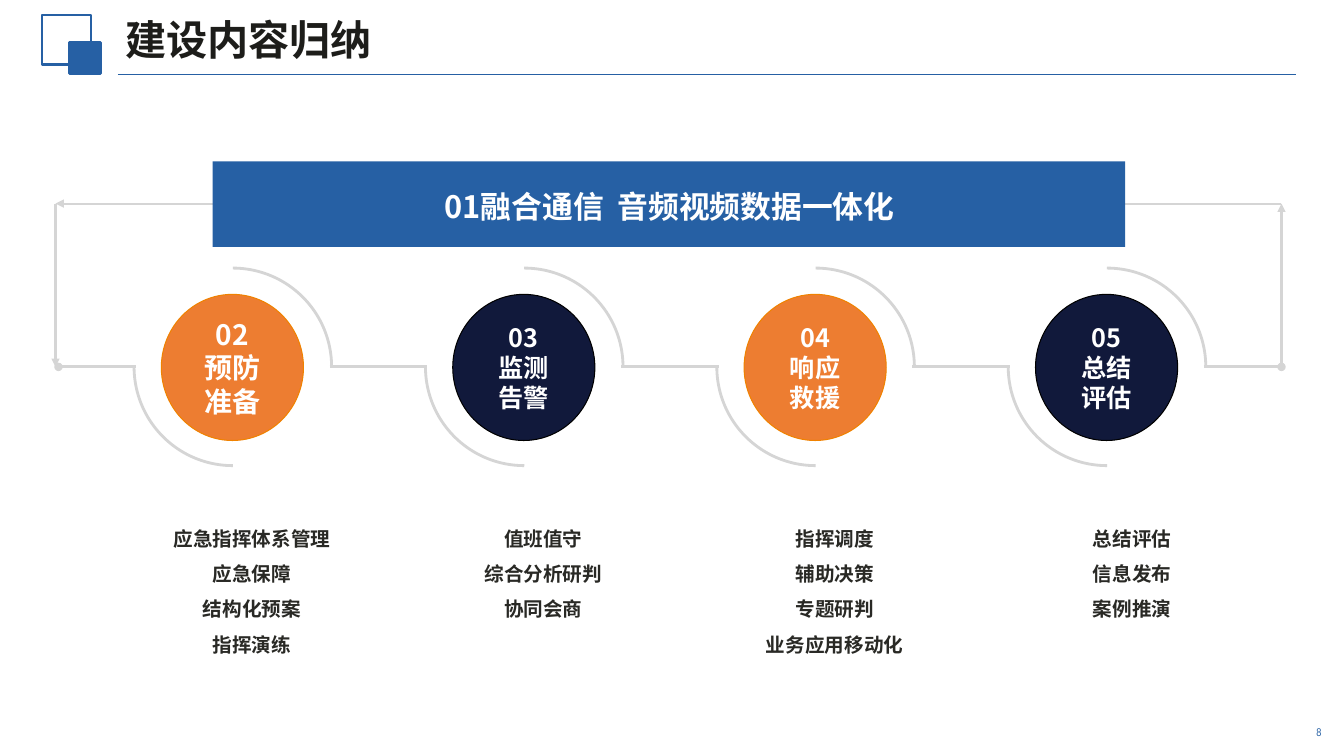
from pptx import Presentation
from pptx.dml.color import RGBColor
from pptx.enum import shapes, text
from pptx.oxml import xmlchemy
from pptx.util import Inches, Pt

BLUE = RGBColor(0x26, 0x60, 0xA4)
ORANGE = RGBColor(0xED, 0x7D, 0x31)
ORANGE_EDGE = RGBColor(0xF0, 0x82, 0x00)
NAVY = RGBColor(0x11, 0x19, 0x3B)
BLACK = RGBColor(0, 0, 0)
WHITE = RGBColor(0xFF, 0xFF, 0xFF)
GREY = RGBColor(0xD5, 0xD5, 0xD5)
TITLE_INK = RGBColor(0x1D, 0x1D, 0x1A)
BODY_INK = RGBColor(0x29, 0x29, 0x25)
FONT = "Noto Sans CJK SC"

FIRST_CENTER, PITCH, AXIS = 2.31, 2.89, 3.64
RADIUS = 0.98
LOOP_LEFT, LOOP_RIGHT, LOOP_TOP = 0.55, 12.71, 2.02

# label lines, number size, fill, outline, items, list offset, list width, list height
STAGES = [
    (["02", "预防", "准备"], 20, ORANGE, ORANGE_EDGE,
     ["应急指挥体系管理", "应急保障", "结构化预案", "指挥演练"], 0.19, 1.96, 2.42),
    (["03", "监测", "告警"], 18, NAVY, BLACK,
     ["值班值守", "综合分析研判", "协同会商"], 0.19, 1.96, 2.42),
    (["04", "响应", "救援"], 18, ORANGE, ORANGE_EDGE,
     ["指挥调度", "辅助决策", "专题研判", "业务应用移动化"], 0.19, 1.96, 2.42),
    (["05", "总结", "评估"], 18, NAVY, BLACK,
     ["总结评估", "信息发布", "案例推演"], 0.25, 2.07, 1.35),
]


def write(frame, lines, size, color, bold=True, font=FONT, spacing=None,
          align=text.PP_ALIGN.CENTER, anchor=text.MSO_ANCHOR.TOP, margins=(0.1, 0.05)):
    frame.word_wrap = True
    frame.vertical_anchor = anchor
    frame.margin_left = frame.margin_right = Inches(margins[0])
    frame.margin_top = frame.margin_bottom = Inches(margins[1])
    for index, line in enumerate(lines):
        paragraph = frame.add_paragraph() if index else frame.paragraphs[0]
        paragraph.text = line
        paragraph.alignment = align
        paragraph.line_spacing = spacing
        paragraph.font.size = Pt(size)
        paragraph.font.bold = bold
        paragraph.font.color.rgb = color
        paragraph.font.name = font
        # East Asian typeface follows the Latin one
        east_asian = xmlchemy.OxmlElement("a:ea")
        east_asian.set("typeface", font)
        paragraph._p.pPr.defRPr.append(east_asian) if hasattr(
            paragraph._p.pPr, "defRPr") else paragraph._p.pPr[-1].append(east_asian)


def add_text(slide, left, top, width, height, lines, size, color, **options):
    box = slide.shapes.add_textbox(Inches(left), Inches(top), Inches(width), Inches(height))
    write(box.text_frame, lines, size, color, **options)


def add_shape(slide, kind, left, top, width, height, fill=None, line=None, weight=1):
    shape = slide.shapes.add_shape(
        kind, Inches(left), Inches(top), Inches(width), Inches(height))
    shape.shadow.inherit = False
    if fill is None:
        shape.fill.background()
    else:
        shape.fill.solid()
        shape.fill.fore_color.rgb = fill
    if line is None:
        shape.line.fill.background()
    else:
        shape.line.color.rgb = line
        shape.line.width = Pt(weight)
    return shape


def add_line(slide, start, end, color=GREY, weight=2.0, head=None, tail=None):
    points = [Inches(value) for value in (*start, *end)]
    line = slide.shapes.add_connector(shapes.MSO_CONNECTOR.STRAIGHT, *points)
    line.line.color.rgb = color
    line.line.width = Pt(weight)
    for tag, kind in (("a:headEnd", head), ("a:tailEnd", tail)):
        if kind:
            mark = xmlchemy.OxmlElement(tag)
            mark.set("type", kind)
            line.line._get_or_add_ln().append(mark)
    line._element.spPr.append(xmlchemy.OxmlElement("a:effectLst"))


def add_arc(slide, center, start, end):
    arc = add_shape(slide, shapes.MSO_SHAPE.ARC, center - RADIUS, AXIS - RADIUS,
                    2 * RADIUS, 2 * RADIUS, line=GREY, weight=2)
    # Angles are in 60000ths of a degree, adjustments in 100000ths
    arc.adjustments[0] = start * 0.6
    arc.adjustments[1] = end * 0.6


def add_header(slide):
    add_line(slide, (1.17, 0.74), (12.85, 0.74), BLUE, 1.25)
    square = shapes.MSO_SHAPE.RECTANGLE
    add_shape(slide, square, 0.42, 0.15, 0.48, 0.49, line=BLUE, weight=1.5)
    add_shape(slide, square, 0.69, 0.42, 0.31, 0.31, BLUE, BLUE, 2)
    add_text(slide, 1.17, 0.18, 8.6, 0.48, ["建设内容归纳"], 29.4, TITLE_INK, spacing=0.9,
             align=text.PP_ALIGN.LEFT, anchor=text.MSO_ANCHOR.MIDDLE, margins=(0.07, 0.04))
    add_text(slide, 12.19, 7.04, 1.78, 0.44, ["8"], 8, BLUE, bold=False,
             font="Arial Narrow", anchor=text.MSO_ANCHOR.MIDDLE)


def add_stage(slide, center, label, size, fill, edge, items, offset, width, height):
    circle = add_shape(slide, shapes.MSO_SHAPE.OVAL, center - 0.71, 2.92, 1.41, 1.45,
                       fill, edge, 0.75)
    write(circle.text_frame, label, size, WHITE,
          anchor=text.MSO_ANCHOR.MIDDLE, margins=(0, 0))
    add_arc(slide, center, 270, 0)
    add_arc(slide, center, 90, 180)
    add_text(slide, center + offset - width / 2, 5.06, width, height,
             items, 14, BODY_INK, spacing=1.5)


def add_loop(slide, centers):
    # Links between neighbouring stages and out to both ends
    for center, following in zip(centers, centers[1:]):
        add_line(slide, (center + 0.96, AXIS), (following - 0.96, AXIS))
    add_line(slide, (0.58, AXIS), (centers[0] - 0.96, AXIS), head="oval")
    add_line(slide, (centers[-1] + 0.96, AXIS), (LOOP_RIGHT, AXIS), tail="oval")
    # Return path behind the banner
    corners = [(LOOP_RIGHT, AXIS), (LOOP_RIGHT, LOOP_TOP), (LOOP_LEFT, LOOP_TOP),
               (LOOP_LEFT, AXIS)]
    for start, end in zip(corners, corners[1:]):
        add_line(slide, start, end, weight=1.5, tail="triangle")


def add_banner(slide):
    add_shape(slide, shapes.MSO_SHAPE.RECTANGLE, 2.11, 1.6, 9.05, 0.85, BLUE)
    add_text(slide, 2.14, 1.86, 9, 0.37, ["01融合通信  音频视频数据一体化"], 22, WHITE,
             margins=(0, 0))


def main():
    presentation = Presentation()
    presentation.slide_width = Inches(13.33)
    presentation.slide_height = Inches(7.5)
    slide = presentation.slides.add_slide(presentation.slide_layouts[6])
    centers = [FIRST_CENTER + PITCH * index for index in range(len(STAGES))]
    add_header(slide)
    for center, stage in zip(centers, STAGES):
        add_stage(slide, center, *stage)
    add_loop(slide, centers)
    add_banner(slide)
    presentation.save("out.pptx")


if __name__ == "__main__":
    main()
